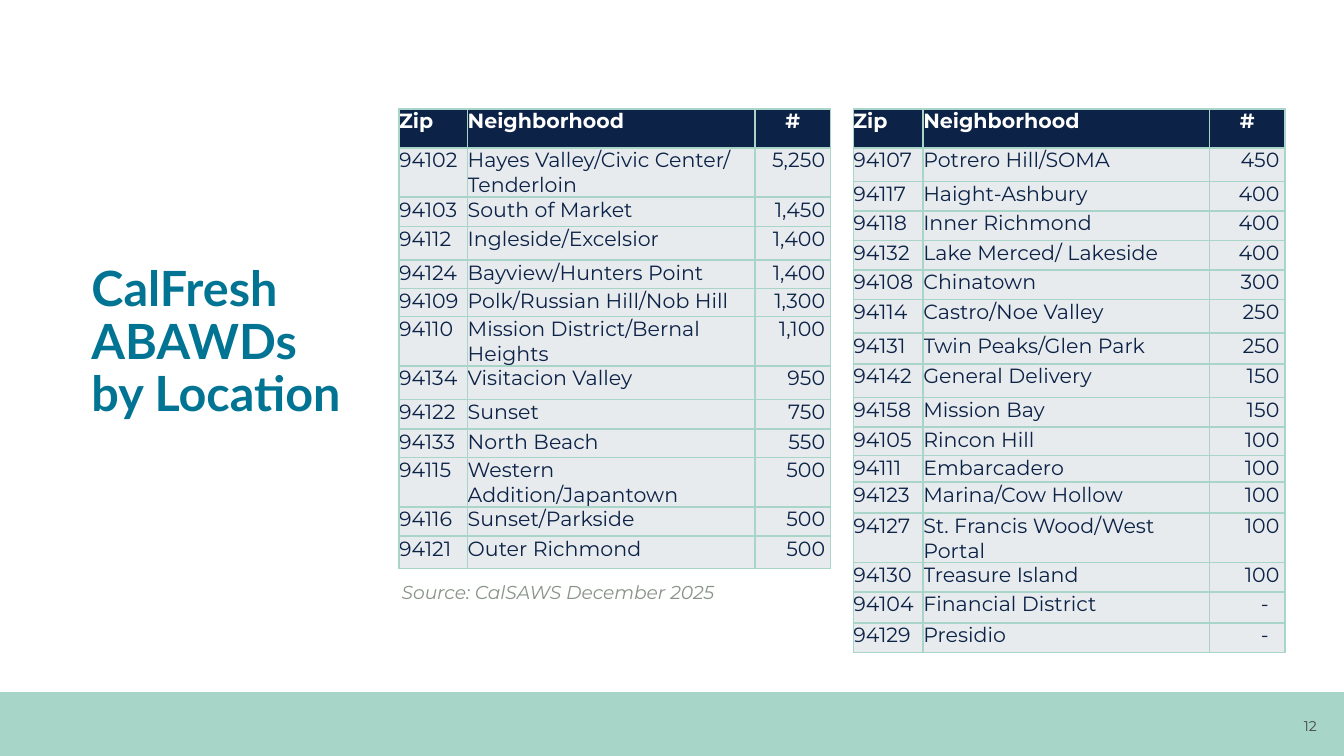
from lxml import etree
from pptx import Presentation
from pptx.dml.color import RGBColor
from pptx.enum.shapes import MSO_SHAPE
from pptx.enum.text import MSO_ANCHOR, MSO_AUTO_SIZE, PP_ALIGN
from pptx.oxml.ns import qn
from pptx.util import Inches, Pt

LEFT, CENTER, RIGHT = PP_ALIGN.LEFT, PP_ALIGN.CENTER, PP_ALIGN.RIGHT
MIDDLE = MSO_ANCHOR.MIDDLE
NO_AUTOFIT, GROW = MSO_AUTO_SIZE.NONE, MSO_AUTO_SIZE.SHAPE_TO_FIT_TEXT
RECTANGLE = MSO_SHAPE.RECTANGLE

NAVY = RGBColor(0x0C, 0x22, 0x46)
TEAL = RGBColor(0x01, 0x74, 0x93)
MINT = RGBColor(0xA7, 0xD5, 0xC7)
BORDER = RGBColor(0xA9, 0xD4, 0xC8)
PALE = RGBColor(0xE7, 0xEB, 0xEE)
GRAY = RGBColor(0x88, 0x93, 0x88)
DARK_GRAY = RGBColor(0x42, 0x46, 0x40)
WHITE = RGBColor(0xFF, 0xFF, 0xFF)

SLIDE_WIDTH = 10
SLIDE_HEIGHT = SLIDE_WIDTH * 9 / 16
HEADER = ("Zip", "Neighborhood", "#")
HEADER_HEIGHT = 0.29
ALIGNMENTS = (LEFT, LEFT, RIGHT)
NUMBER_MARGIN, DASH_MARGIN = 0.04, 0.12

# Zip code, neighborhood, count, row height in inches
LARGER_AREAS = [
    ("94102", "Hayes Valley/Civic Center/ Tenderloin", "5,250", 0.21),
    ("94103", "South of Market", "1,450", 0.22),
    ("94112", "Ingleside/Excelsior", "1,400", 0.25),
    ("94124", "Bayview/Hunters Point", "1,400", 0.21),
    ("94109", "Polk/Russian Hill/Nob Hill", "1,300", 0.21),
    ("94110", "Mission District/Bernal Heights", "1,100", 0.22),
    ("94134", "Visitacion Valley", "950", 0.25),
    ("94122", "Sunset", "750", 0.22),
    ("94133", "North Beach", "550", 0.21),
    ("94115", "Western Addition/Japantown", "500", 0.22),
    ("94116", "Sunset/Parkside", "500", 0.22),
    ("94121", "Outer Richmond", "500", 0.24),
]
SMALLER_AREAS = [
    ("94107", "Potrero Hill/SOMA", "450", 0.25),
    ("94117", "Haight-Ashbury", "400", 0.22),
    ("94118", "Inner Richmond", "400", 0.22),
    ("94132", "Lake Merced/ Lakeside", "400", 0.22),
    ("94108", "Chinatown", "300", 0.22),
    ("94114", "Castro/Noe Valley", "250", 0.25),
    ("94131", "Twin Peaks/Glen Park", "250", 0.23),
    ("94142", "General Delivery", "150", 0.25),
    ("94158", "Mission Bay", "150", 0.22),
    ("94105", "Rincon Hill", "100", 0.21),
    ("94111", "Embarcadero", "100", 0.2),
    ("94123", "Marina/Cow Hollow", "100", 0.23),
    ("94127", "St. Francis Wood/West Portal", "100", 0.22),
    ("94130", "Treasure Island", "100", 0.22),
    ("94104", "Financial District", "-", 0.23),
    ("94129", "Presidio", "-", 0.22),
]


def write_text(text_frame, text, size=11, font="Montserrat", color=NAVY,
               bold=False, italic=False, align=LEFT, line_spacing=None):
    paragraph = text_frame.paragraphs[0]
    paragraph.text = text
    paragraph.alignment = align
    paragraph.line_spacing = line_spacing
    paragraph.font.size = Pt(size)
    paragraph.font.name = font
    paragraph.font.color.rgb = color
    paragraph.font.bold = bold
    paragraph.font.italic = italic


def set_borders(cell):
    properties = cell._tc.get_or_add_tcPr()
    for position, side in enumerate(("lnL", "lnR", "lnT", "lnB")):
        line = etree.Element(qn(f"a:{side}"), w=str(Pt(1)))
        fill = etree.SubElement(line, qn("a:solidFill"))
        etree.SubElement(fill, qn("a:srgbClr"), val=str(BORDER))
        properties.insert(position, line)


def fill_cell(cell, text, fill, right_margin=0, **text_format):
    cell.margin_left = cell.margin_top = cell.margin_bottom = 0
    cell.margin_right = Inches(right_margin)
    cell.fill.solid()
    cell.fill.fore_color.rgb = fill
    set_borders(cell)
    write_text(cell.text_frame, text, **text_format)


def add_location_table(slide, left, top, column_widths, areas):
    heights = [HEADER_HEIGHT] + [area[-1] for area in areas]
    table = slide.shapes.add_table(
        len(heights), len(HEADER), Inches(left), Inches(top),
        Inches(sum(column_widths)), Inches(sum(heights))).table
    for column, width in zip(table.columns, column_widths):
        column.width = Inches(width)
    for row, height in zip(table.rows, heights):
        row.height = Inches(height)

    for index, label in enumerate(HEADER):
        fill_cell(table.cell(0, index), label, NAVY, color=WHITE, bold=True,
                  align=CENTER if label == "#" else LEFT)
    for row_index, (*values, _) in enumerate(areas, start=1):
        count_margin = DASH_MARGIN if values[-1] == "-" else NUMBER_MARGIN
        margins = (0, 0, count_margin)
        for index, (value, margin, align) in enumerate(zip(values, margins, ALIGNMENTS)):
            fill_cell(table.cell(row_index, index), value, PALE, margin, align=align)


def add_footer(slide, top, height):
    band = slide.shapes.add_shape(RECTANGLE, 0, Inches(top), Inches(SLIDE_WIDTH), Inches(height))
    band.shadow.inherit = False
    band.fill.solid()
    band.fill.fore_color.rgb = MINT
    band.line.fill.background()
    number = slide.shapes.add_textbox(
        Inches(SLIDE_WIDTH - 0.5), Inches(top + 0.1), Inches(0.5), Inches(0.3))
    number.text_frame.word_wrap = True
    number.text_frame.vertical_anchor = MIDDLE
    write_text(number.text_frame, "12", size=7.5, color=DARK_GRAY, align=CENTER)


def place_title(slide, left, top, width, height):
    title = slide.shapes.title
    title.left, title.top = Inches(left), Inches(top)
    title.width, title.height = Inches(width), Inches(height)
    frame = title.text_frame
    frame.auto_size = NO_AUTOFIT
    frame.vertical_anchor = MIDDLE
    frame.margin_left = frame.margin_right = Inches(0.04)
    frame.margin_top = frame.margin_bottom = Inches(0.07)
    write_text(frame, "CalFresh \vABAWDs \vby Location", size=26, font="Lato",
               color=TEAL, bold=True, line_spacing=0.9)


def add_source(slide, left, top, width, height):
    source = slide.shapes.add_textbox(Inches(left), Inches(top), Inches(width), Inches(height))
    source.text_frame.word_wrap = False
    source.text_frame.auto_size = GROW
    write_text(source.text_frame, "Source: CalSAWS December 2025", size=10, color=GRAY, italic=True)


def main():
    presentation = Presentation()
    presentation.slide_width = Inches(SLIDE_WIDTH)
    presentation.slide_height = Inches(SLIDE_HEIGHT)
    title_only = presentation.slide_layouts.get_by_name("Title Only")
    slide = presentation.slides.add_slide(title_only)
    add_footer(slide, 5.15, SLIDE_HEIGHT - 5.15)
    place_title(slide, 0.64, 1.81, 3.08, 1.49)
    add_source(slide, 2.89, 4.27, 2.58, 0.27)
    add_location_table(slide, 2.97, 0.81, (0.51, 2.14, 0.56), LARGER_AREAS)
    add_location_table(slide, 6.35, 0.81, (0.52, 2.13, 0.56), SMALLER_AREAS)
    presentation.save("out.pptx")


if __name__ == "__main__":
    main()
